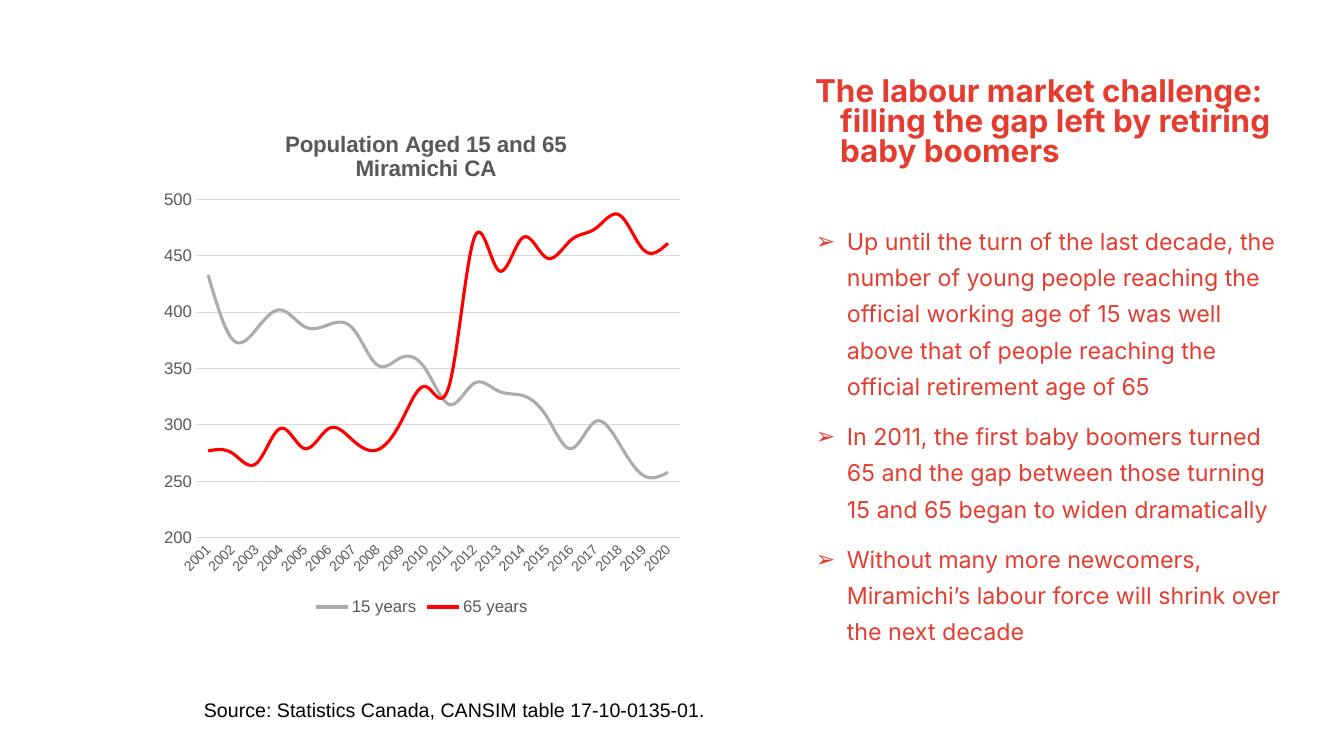
from lxml.etree import SubElement
from pptx import Presentation
from pptx.chart.data import CategoryChartData
from pptx.dml.color import RGBColor
from pptx.enum.chart import XL_CHART_TYPE as ChartType, XL_LEGEND_POSITION as LegendPosition
from pptx.enum.chart import XL_TICK_MARK as TickMark
from pptx.enum.text import MSO_ANCHOR as Anchor, MSO_AUTO_SIZE as AutoSize, PP_ALIGN as Align
from pptx.oxml import parse_xml
from pptx.oxml.ns import nsdecls, qn
from pptx.util import Emu, Pt

PX = 914400 / 100.8
COLORS = {"accent": "E43D30", "black": "000000", "label": "595959",
          "grid": "D9D9D9", "young": "AFABAB", "retiring": "FF0000"}

TITLE = "The labour market challenge: filling the gap left by retiring baby boomers"
POINTS = [
    "Up until the turn of the last decade, the number of young people reaching the "
    "official working age of 15 was well above that of people reaching the official "
    "retirement age of 65",
    "In 2011, the first baby boomers turned 65 and the gap between those turning "
    "15 and 65 began to widen dramatically",
    "Without many more newcomers, Miramichi’s labour force will shrink over the next decade",
]
SOURCE = "Source: Statistics Canada, CANSIM table 17-10-0135-01."
CHART_TITLE = "Population Aged 15 and 65\nMiramichi CA"
YEARS = [str(year) for year in range(2001, 2021)]
POPULATION = [
    ("15 years", "young", [433, 376, 385, 402, 387, 389, 385, 353, 360, 349,
                           318, 337, 330, 326, 307, 279, 303, 283, 255, 258]),
    ("65 years", "retiring", [277, 275, 266, 297, 279, 297, 286, 278, 304, 334,
                              338, 466, 437, 466, 448, 464, 474, 486, 455, 461]),
]


def px(length):
    return Emu(round(length * PX))


def rgb(name):
    return RGBColor.from_string(COLORS[name])


def set_font(font, size, color, name="Arial", bold=False):
    font.size, font.name, font.bold = Pt(size), name, bold
    font.color.rgb = rgb(color)


def set_layout(parent, position, **values):
    """Place a chart part by fractions of the chart's size."""
    for old in parent.findall(qn("c:layout")):
        parent.remove(old)
    layout = parse_xml(f"<c:layout {nsdecls('c')}><c:manualLayout/></c:layout>")
    for tag, value in values.items():
        SubElement(layout[0], qn(f"c:{tag}")).set("val", str(value))
    parent.insert(position, layout)


class SlideBuilder:
    def __init__(self, presentation):
        self.slide = presentation.slides.add_slide(presentation.slide_layouts[5])

    def fill_text(self, shape, text, size, color, font="Arial", bold=False,
                  indent=None, line_spacing=None, space_before=0, bullet=None):
        frame = shape.text_frame
        frame.word_wrap = True
        frame.auto_size = AutoSize.NONE
        frame.vertical_anchor = Anchor.TOP
        frame.text = text
        for index, paragraph in enumerate(frame.paragraphs):
            properties = paragraph._p.get_or_add_pPr()
            if bullet:
                bullet_color = SubElement(properties, qn("a:buClr"))
                SubElement(bullet_color, qn("a:srgbClr")).set("val", COLORS[color])
                SubElement(properties, qn("a:buFont")).set("typeface", "Arial")
                SubElement(properties, qn("a:buChar")).set("char", bullet)
            if indent:
                margin, hanging = indent
                properties.set("marL", str(px(margin)))
                properties.set("indent", str(-px(hanging)))
            paragraph.alignment = Align.LEFT
            paragraph.line_spacing = line_spacing
            paragraph.space_before = Pt(space_before if index else 0)
            for run in paragraph.runs:
                set_font(run.font, size, color, font, bold)

    def title(self, text, left, top, width, height, **style):
        shape = self.slide.shapes.title
        shape.left, shape.top, shape.width, shape.height = map(px, (left, top, width, height))
        self.fill_text(shape, text, **style)

    def text(self, text, left, top, width, height, **style):
        shape = self.slide.shapes.add_textbox(*map(px, (left, top, width, height)))
        self.fill_text(shape, text, **style)

    def line_chart(self, title, categories, series_rows, left, top, width, height):
        data = CategoryChartData()
        data.categories = categories
        for name, _, values in series_rows:
            data.add_series(name, values)
        chart = self.slide.shapes.add_chart(
            ChartType.LINE, *map(px, (left, top, width, height)), data).chart
        set_font(chart.font, 10, "black")
        plot = chart.plots[0]
        plot.vary_by_categories = False
        for series, (_, color, _) in zip(plot.series, series_rows):
            series.smooth = True
            series.format.line.width = Pt(2.25)
            series.format.line.color.rgb = rgb(color)

        chart.has_title = True
        chart.chart_title.text_frame.text = title
        for paragraph in chart.chart_title.text_frame.paragraphs:
            for run in paragraph.runs:
                set_font(run.font, 16, "label", bold=True)
        chart.has_legend = True
        chart.legend.position = LegendPosition.BOTTOM
        chart.legend.include_in_layout = False
        set_font(chart.legend.font, 12, "label")
        self.format_axes(chart)

        root = chart.element
        set_layout(root.xpath("c:chart/c:title")[0], 1,
                   xMode="edge", yMode="edge", x=0.24, y=0.04)
        set_layout(root.xpath("c:chart/c:plotArea")[0], 0, layoutTarget="inner",
                   xMode="edge", yMode="edge", x=0.08, y=0.18, w=0.9, h=0.66)

    def format_axes(self, chart):
        for axis, size in ((chart.category_axis, 10), (chart.value_axis, 12)):
            axis.major_tick_mark = axis.minor_tick_mark = TickMark.NONE
            set_font(axis.tick_labels.font, size, "label")
        values = chart.value_axis
        values.minimum_scale, values.maximum_scale, values.major_unit = 200, 500, 50
        values.format.line.fill.background()
        for line in (values.major_gridlines.format.line, chart.category_axis.format.line):
            line.width = Pt(0.75)
            line.color.rgb = rgb("grid")
        label_body = chart.element.xpath(".//c:catAx/c:txPr/a:bodyPr")[0]
        label_body.set("rot", str(-45 * 60000))


def main():
    presentation = Presentation()
    presentation.slide_width, presentation.slide_height = px(1344), px(756)
    builder = SlideBuilder(presentation)
    builder.title(TITLE, 780, 73, 513, 131, size=22.4, color="accent", font="Inter",
                  bold=True, indent=(50, 25), line_spacing=0.8)
    builder.text("\n".join(POINTS), 780, 214, 513, 471, size=16.6, color="accent",
                 font="Inter", indent=(57, 31), line_spacing=1.3, space_before=10, bullet="➢")
    builder.text(SOURCE, 194, 693, 943, 34, size=14, color="black")
    builder.line_chart(CHART_TITLE, YEARS, POPULATION, 153, 107, 538, 513)
    presentation.save("out.pptx")


if __name__ == "__main__":
    main()
